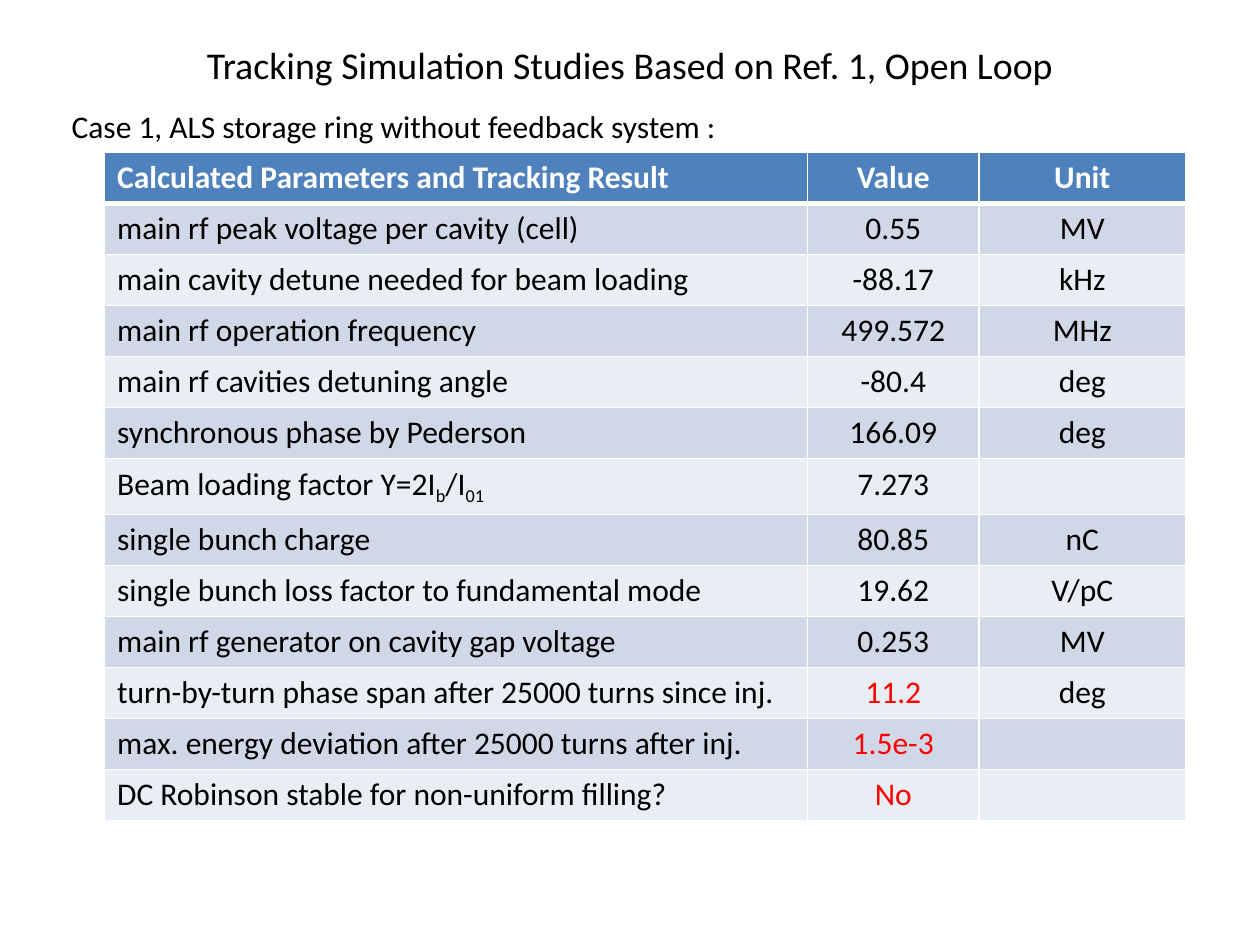
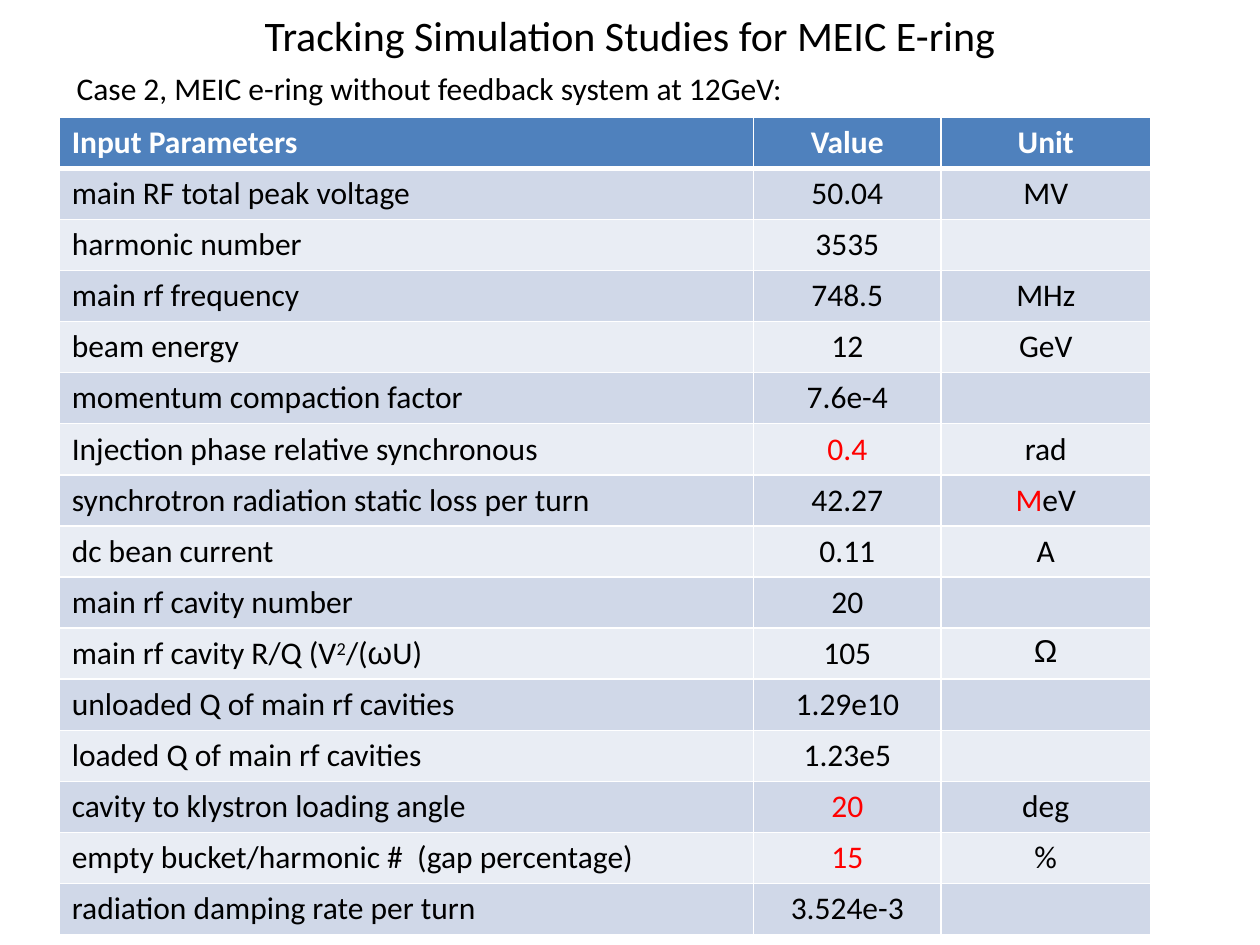
from dataclasses import dataclass
from lxml.etree import SubElement as Sub
from pptx import Presentation
from pptx.dml.color import RGBColor as Rgb
from pptx.enum.text import MSO_ANCHOR as Anchor, PP_ALIGN as Align
from pptx.oxml.ns import qn
from pptx.util import Inches, Pt


@dataclass(frozen=True)
class Theme:
    """Colours, fonts and type sizes of the deck."""
    font: str = "Calibri"
    greek: str = "Arial"
    ink: str = "000000"
    white: str = "FFFFFF"
    red: str = "FF0000"
    head: str = "4F81BD"
    bands: tuple = ("D0D8E8", "E9EDF4")
    body: float = 18
    thin: float = 1
    thick: float = 3


@dataclass(frozen=True)
class Run:
    """A piece of text that differs from the plain body style."""
    text: str
    color: str = None
    font: str = None
    shift: int = 0


THEME = Theme()


def red(text):
    """Make a highlighted run."""
    return Run(text, color=THEME.red)


def greek(text):
    """Make a run of Greek letters."""
    return Run(text, font=THEME.greek)


def write(para, parts, color=THEME.ink, size=THEME.body, bold=False):
    """Add a string, a run or a list of both to a paragraph."""
    for part in parts if isinstance(parts, list) else [parts]:
        item = Run(part) if isinstance(part, str) else part
        if not item.text:
            continue
        run = para.add_run()
        run.text = item.text
        run.font.name = item.font or THEME.font
        run.font.size = Pt(size)
        run.font.bold = bold
        run.font.color.rgb = Rgb.from_string(item.color or color)
        if item.shift:
            run.font._element.set("baseline", str(item.shift * 1000))


def place(box):
    """Turn a box in inches into lengths."""
    return [Inches(n) for n in box]


def add_title(slide, box, text, size):
    """Draw the centred slide title."""
    frame = slide.shapes.add_textbox(*place(box)).text_frame
    frame.word_wrap = True
    frame.vertical_anchor = Anchor.MIDDLE
    frame.paragraphs[0].alignment = Align.CENTER
    write(frame.paragraphs[0], text, size=size)


def add_case(slide, box, text):
    """Draw the line that names the case."""
    frame = slide.shapes.add_textbox(*place(box)).text_frame
    frame.word_wrap = False
    write(frame.paragraphs[0], text)


def add_edges(cell, top, base):
    """Draw the white rules round a cell."""
    props = cell._tc.get_or_add_tcPr()
    widths = {"L": THEME.thin, "R": THEME.thin, "T": top, "B": base}
    for side, width in widths.items():
        line = Sub(props, qn(f"a:ln{side}"), w=str(Pt(width)))
        fill = Sub(line, qn("a:solidFill"))
        Sub(fill, qn("a:srgbClr"), val=THEME.white)


def add_grid(slide, box, cols, rows):
    """Draw a banded table of parameters, its heading row first."""
    frame = slide.shapes.add_table(len(rows), len(cols), *place(box))
    table = frame.table
    table.horz_banding = False
    for col, width in zip(table.columns, cols):
        col.width = Inches(width)
    for r, row in enumerate(rows):
        table.rows[r].height = Inches(box[3] / len(rows))
        head = r == 0
        shade = THEME.head if head else THEME.bands[(r - 1) % 2]
        color = THEME.white if head else THEME.ink
        top = THEME.thick if r == 1 else THEME.thin
        base = THEME.thick if head else THEME.thin
        for c, parts in enumerate(row):
            cell = table.cell(r, c)
            add_edges(cell, top, base)
            cell.fill.solid()
            cell.fill.fore_color.rgb = Rgb.from_string(shade)
            para = cell.text_frame.paragraphs[0]
            para.alignment = Align.CENTER if c else Align.LEFT
            write(para, parts, color=color, bold=head)


RESULTS = [
    ("Calculated Parameters and Tracking Result", "Value", "Unit"),
    ("main rf peak voltage per cavity (cell)", "0.55", "MV"),
    ("main cavity detune needed for beam loading", "-88.17", "kHz"),
    ("main rf operation frequency", "499.572", "MHz"),
    ("main rf cavities detuning angle", "-80.4", "deg"),
    ("synchronous phase by Pederson", "166.09", "deg"),
    (["Beam loading factor Y=2I", Run("b", shift=-25), "/I",
      Run("01", shift=-25)], "7.273", ""),
    ("single bunch charge", "80.85", "nC"),
    ("single bunch loss factor to fundamental mode", "19.62", "V/pC"),
    ("main rf generator on cavity gap voltage", "0.253", "MV"),
    ("turn-by-turn phase span after 25000 turns since inj.",
     red("11.2"), "deg"),
    ("max. energy deviation after 25000 turns after inj.",
     red("1.5e-3"), ""),
    ("DC Robinson stable for non-uniform filling?", red("No"), ""),
]

INPUTS = [
    ("Input Parameters", "Value", "Unit"),
    ("main RF total peak voltage", "50.04", "MV"),
    ("harmonic number", "3535", ""),
    ("main rf frequency", "748.5", "MHz"),
    ("beam energy", "12", "GeV"),
    ("momentum compaction factor", "7.6e-4", ""),
    ("Injection phase relative synchronous", red("0.4"), "rad"),
    ("synchrotron radiation static loss per turn", "42.27",
     [red("M"), "eV"]),
    ("dc bean current", "0.11", "A"),
    ("main rf cavity number", "20", ""),
    (["main rf cavity R/Q (V", Run("2", shift=30), "/(", greek("ω"), "U)"],
     "105", greek("Ω")),
    ("unloaded Q of main rf cavities", "1.29e10", ""),
    ("loaded Q of main rf cavities", "1.23e5", ""),
    ("cavity to klystron loading angle", red("20"), "deg"),
    ("empty bucket/harmonic #  (gap percentage)", red("15"), "%"),
    ("radiation damping rate per turn", "3.524e-3", ""),
]


def main():
    """Build and save the deck."""
    deck = Presentation()
    deck.slide_width, deck.slide_height = Inches(10), Inches(7.5)
    blank = deck.slide_layouts[6]

    slide = deck.slides.add_slide(blank)
    add_title(slide, (1.25, 0.25, 7.5, 0.53),
              "Tracking Simulation Studies Based on Ref. 1, Open Loop", 21.6)
    add_case(slide, (0.47, 0.8, 5.38, 0.4),
             "Case 1, ALS storage ring without feedback system :")
    add_grid(slide, (0.83, 1.21, 8.58, 5.27), (5.58, 1.36, 1.64), RESULTS)

    slide = deck.slides.add_slide(blank)
    add_title(slide, (1.25, 0.01, 7.5, 0.53),
              "Tracking Simulation Studies for MEIC E-ring", 24)
    add_case(slide, (0.51, 0.5, 5.87, 0.4),
             "Case 2, MEIC e-ring without feedback system at 12GeV:")
    add_grid(slide, (0.47, 0.93, 8.67, 6.49), (5.51, 1.49, 1.66), INPUTS)

    deck.save("out.pptx")


if __name__ == "__main__":
    main()
